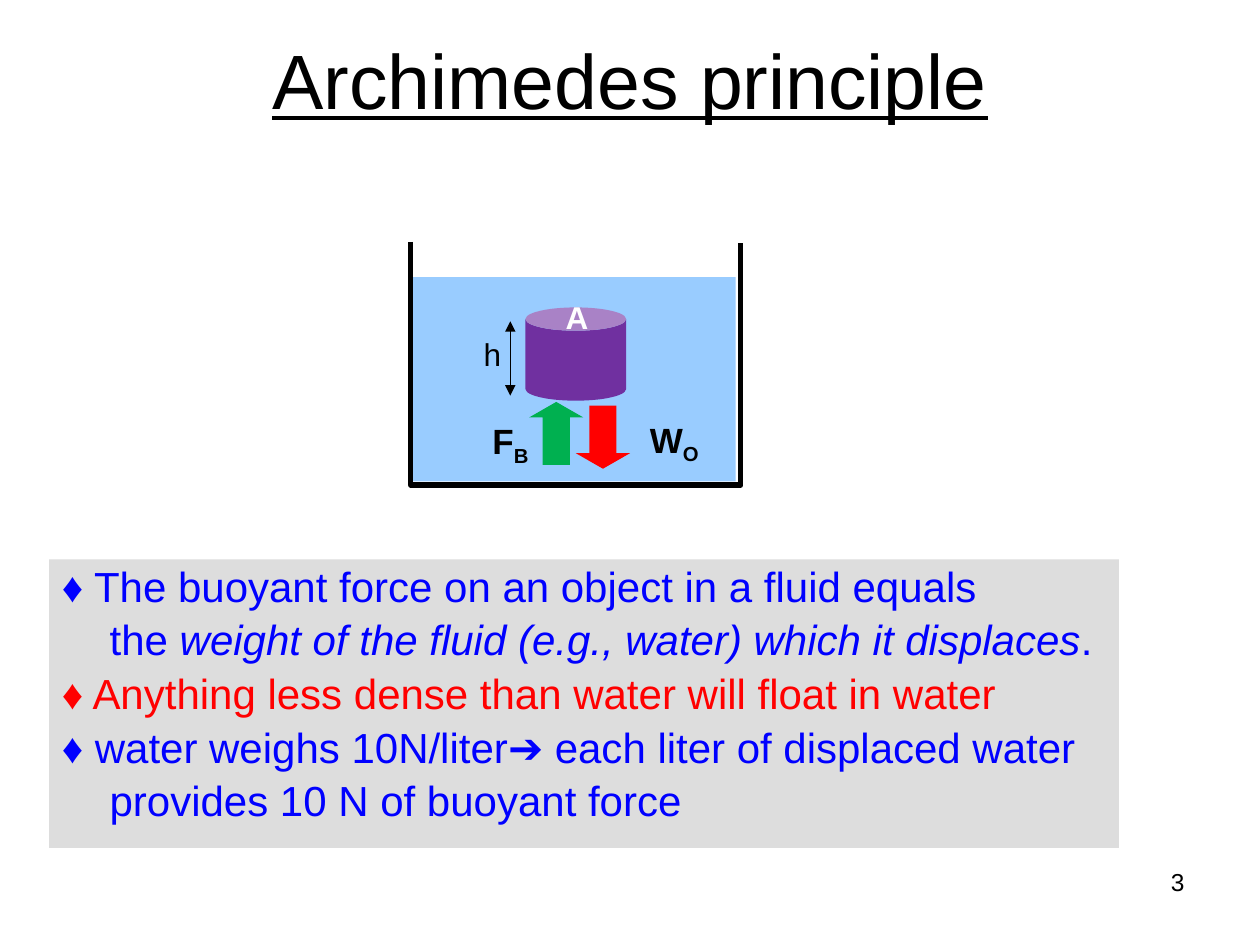
import pptx
import pptx.util
import pptx.dml.color
import pptx.enum.shapes
import pptx.enum.text
import pptx.oxml
import pptx.oxml.ns
import lxml.etree

PX = 9144
FONT = "Arial"
INK = {
    "black": "000000", "white": "FFFFFF", "grey": "DDDDDD", "blue": "0000FF",
    "red": "FF0000", "green": "00B050", "water": "99CCFF", "purple": "7030A0",
}
SHAPE = pptx.enum.shapes.MSO_SHAPE
ALIGN = pptx.enum.text.PP_ALIGN
FIT = pptx.enum.text.MSO_AUTO_SIZE


def color(name):
    return pptx.dml.color.RGBColor.from_string(INK[name])


def place(item, box):
    item.left, item.top, item.width, item.height = [v * PX for v in box]


def paint(item, name):
    item.fill.solid()
    item.fill.fore_color.rgb = color(name)


def style(para, size, name="black", bold=False):
    font = para.font
    font.name = FONT
    font.size = pptx.util.Pt(size)
    font.bold = bold
    font.color.rgb = color(name)


def solid(slide, kind, box, name, ratios=()):
    item = slide.shapes.add_shape(kind, *[v * PX for v in box])
    item.shadow.inherit = False
    paint(item, name)
    item.line.fill.background()
    for i, ratio in enumerate(ratios):
        item.adjustments[i] = ratio
    return item


def label(slide, box, text, size, name="black", bold=False, sub="", wrap=False):
    item = slide.shapes.add_textbox(*[v * PX for v in box])
    frame = item.text_frame
    frame.word_wrap = wrap
    frame.auto_size = FIT.SHAPE_TO_FIT_TEXT
    para = frame.paragraphs[0]
    style(para, size, name, bold)
    para.add_run().text = text
    if sub:
        run = para.add_run()
        run.text = sub
        run._r.get_or_add_rPr().set("baseline", "-25000")
    return item


def span(slide, x, top, end):
    line = slide.shapes.add_connector(
        pptx.enum.shapes.MSO_CONNECTOR.STRAIGHT, x * PX, top * PX, x * PX, end * PX)
    line.line.color.rgb = color("black")
    line.line.width = pptx.util.Pt(0.75)
    qn = pptx.oxml.ns.qn
    stroke = line.line._get_or_add_ln()
    for tag in ("a:headEnd", "a:tailEnd"):
        lxml.etree.SubElement(stroke, qn(tag)).set("type", "triangle")
    lxml.etree.SubElement(line._element.spPr, qn("a:effectLst"))


def title(slide, box):
    head = slide.shapes.title
    place(head, box)
    paint(head, "white")
    head.text_frame.text = "Archimedes principle"
    head.text_frame.vertical_anchor = pptx.enum.text.MSO_ANCHOR.MIDDLE
    para = head.text_frame.paragraphs[0]
    para.alignment = ALIGN.CENTER
    style(para, 44)
    para.font.underline = True


def tank(slide, box):
    x, y, w, h = box
    build = slide.shapes.build_freeform(x, y, scale=PX)
    build.add_line_segments([(x, y + h), (x + w, y + h), (x + w, y + 1)], close=False)
    wall = build.convert_to_shape()
    wall.shadow.inherit = False
    wall.fill.background()
    wall.line.color.rgb = color("black")
    wall.line.width = pptx.util.Pt(3)

    solid(slide, SHAPE.RECTANGLE, (x + 2, y + 28, 256, 162), "water")
    head = (0.5, 0.287)
    solid(slide, SHAPE.UP_ARROW, (x + 94, y + 127, 43, 50), "green", head)
    down = solid(slide, SHAPE.UP_ARROW, (x + 131, y + 130, 43, 50), "red", head)
    down.rotation = 180
    label(slide, (x + 180, y + 135, 60, 43), "W", 20, bold=True, sub="O")
    label(slide, (x + 55, y + 136, 50, 43), "F", 20, bold=True, sub="B")
    solid(slide, SHAPE.CAN, (x + 91, y + 52, 80, 74), "purple", (0.25,))
    label(slide, (x + 113, y + 40, 31, 40), "A", 18, "white", True, wrap=True)
    span(slide, x + 79, y + 63, y + 122)
    label(slide, (x + 48, y + 69, 34, 40), "h", 18)


def notes(slide, box):
    lines = [
        ("blue", True, [("♦ The buoyant force on an object in a fluid equals", False)]),
        ("blue", False, [("the ", False),
                         ("weight of the fluid (e.g., water) which it displaces", True),
                         (".", False)]),
        ("red", True, [("♦ Anything less dense than water will float in water", False)]),
        ("blue", True, [("♦ water weighs 10N/liter➔ each liter of displaced water", False)]),
        ("blue", False, [("provides 10 N of buoyant force", False)]),
    ]
    body = slide.placeholders[1]
    place(body, box)
    paint(body, "grey")
    frame = body.text_frame
    frame.auto_size = FIT.NONE
    for i, (name, first, parts) in enumerate(lines):
        para = frame.add_paragraph() if i else frame.paragraphs[0]
        para.line_spacing = 0.9
        para.space_before = pptx.util.Pt(4.8)
        props = para._p.get_or_add_pPr()
        props.set("marL", str(38 * PX))
        props.set("indent", str(-38 * PX if first else 0))
        style(para, 24, name)
        props.insert_element_before(
            pptx.oxml.parse_xml("<a:buNone %s/>" % pptx.oxml.ns.nsdecls("a")),
            "a:tabLst", "a:defRPr", "a:extLst")
        for text, slant in parts:
            run = para.add_run()
            run.text = text
            if slant:
                run.font.italic = True


def number(slide, box):
    item = label(slide, box, "3", 14, wrap=True)
    item.text_frame.auto_size = FIT.NONE
    item.text_frame.paragraphs[0].alignment = ALIGN.RIGHT


def main():
    deck = pptx.Presentation()
    deck.slide_width, deck.slide_height = 1000 * PX, 750 * PX
    slide = deck.slides.add_slide(deck.slide_layouts[1])
    title(slide, (0, 0, 1000, 125))
    notes(slide, (39, 444, 849, 229))
    tank(slide, (326, 192, 262, 193))
    number(slide, (717, 683, 233, 52))
    deck.save("out.pptx")


if __name__ == "__main__":
    main()
